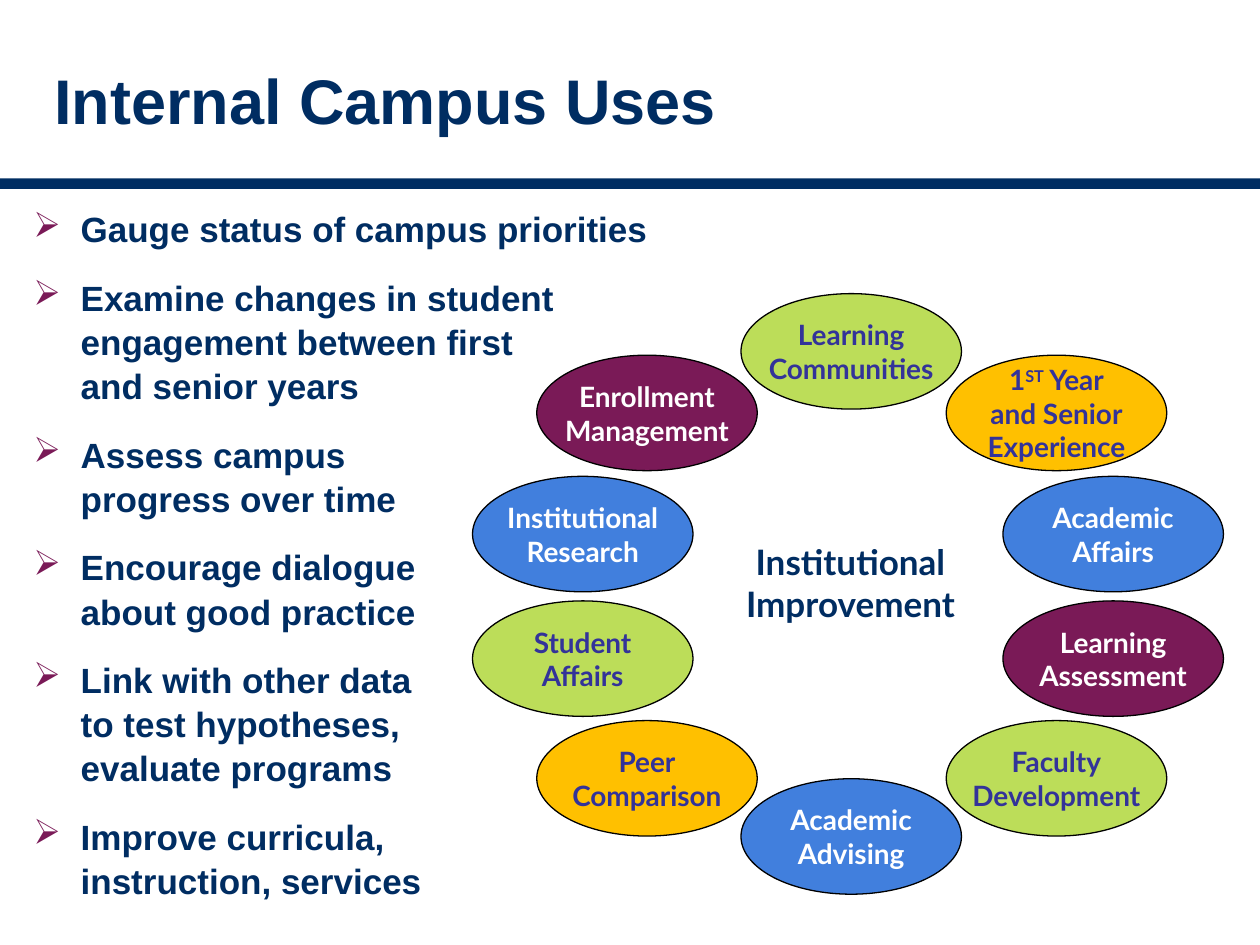
"""Build the slide on internal campus uses with its ring of improvement areas."""
import pptx
import pptx.dml.color
import pptx.enum.shapes
import pptx.enum.text
import pptx.oxml.ns
import pptx.util
from lxml import etree

Pt = pptx.util.Pt
RGBColor = pptx.dml.color.RGBColor
Shape = pptx.enum.shapes.MSO_SHAPE
Align = pptx.enum.text.PP_ALIGN
Anchor = pptx.enum.text.MSO_ANCHOR
qn = pptx.oxml.ns.qn

NAVY = RGBColor(0x00, 0x2D, 0x62)
PLUM = RGBColor(0x7A, 0x1A, 0x57)
GREEN = RGBColor(0x99, 0xCC, 0x00)
GOLD = RGBColor(0xFF, 0xC0, 0x00)
BLUE = RGBColor(0x41, 0x7F, 0xDD)
INDIGO = RGBColor(0x33, 0x33, 0x99)
WHITE = RGBColor(0xFF, 0xFF, 0xFF)
BLACK = RGBColor(0x00, 0x00, 0x00)

OVAL_WIDTH, OVAL_HEIGHT = 126, 66
COLUMNS = (270, 306.7, 423.4, 540.7, 573.1)
ROWS = (167.8, 203, 272.2, 343.4, 411.8, 445)

USES = (
    "Gauge status of campus priorities",
    "Examine changes in student\nengagement between first\nand senior years",
    "Assess campus\nprogress over time",
    "Encourage dialogue\nabout good practice",
    "Link with other data\nto test hypotheses,\nevaluate programs",
    "Improve curricula,\ninstruction, services",
)

AREAS = (
    (2, 0, GREEN, INDIGO, 126, "Learning\nCommunities"),
    (3, 1, GOLD, INDIGO, 110, "1^ST^ Year\nand Senior\nExperience"),
    (4, 2, BLUE, WHITE, 92, "Academic\nAffairs"),
    (4, 3, PLUM, WHITE, 110, "Learning\nAssessment"),
    (3, 4, GREEN, INDIGO, 122, "Faculty\nDevelopment"),
    (2, 5, BLUE, WHITE, 92, "Academic\nAdvising"),
    (1, 4, GOLD, INDIGO, 110, "Peer\nComparison"),
    (0, 3, GREEN, INDIGO, 78, "Student\nAffairs"),
    (0, 2, BLUE, WHITE, 115, "Institutional\nResearch"),
    (1, 1, PLUM, WHITE, 120, "Enrollment\nManagement"),
)


class SlideBuilder:
    """Hold the slide and its style, and draw each kind of element."""

    heading_font = "Arial"
    diagram_font = "Lato"

    def __init__(self, slide):
        self.slide = slide

    def shape(self, kind, left, top, width, height, fill=None, line=None):
        """Add a preset shape without shadow."""
        shape = self.slide.shapes.add_shape(
            kind, Pt(left), Pt(top), Pt(width), Pt(height))
        shape.shadow.inherit = False
        if fill is None:
            shape.fill.background()
        else:
            shape.fill.solid()
            shape.fill.fore_color.rgb = fill
        if line is None:
            shape.line.fill.background()
        else:
            shape.line.color.rgb = line
            shape.line.width = Pt(0.75)
        return shape

    def fill_text(self, paragraph, text, font, size, color):
        """Set lines of bold text, with superscripts between carets."""
        for number, line in enumerate(text.split("\n")):
            if number:
                paragraph.add_line_break()
            for index, part in enumerate(line.split("^")):
                run = paragraph.add_run()
                run.text = part
                if index % 2:
                    run.font._element.set("baseline", "30000")
        paragraph.font.name = font
        paragraph.font.size = Pt(size)
        paragraph.font.bold = True
        paragraph.font.color.rgb = color

    def text_box(self, left, top, width, height, anchor, wrap=True):
        """Add an empty text box and return its text frame."""
        box = self.slide.shapes.add_textbox(
            Pt(left), Pt(top), Pt(width), Pt(height))
        box.text_frame.word_wrap = wrap
        box.text_frame.vertical_anchor = anchor
        return box.text_frame

    def title(self, text):
        """Add the slide title and the bar below it."""
        self.shape(Shape.RECTANGLE, 0, 102, 720, 6, NAVY)
        frame = self.text_box(24, 18, 672, 78, Anchor.MIDDLE)
        self.fill_text(frame.paragraphs[0], text, self.heading_font, 36, NAVY)

    def bullets(self, items):
        """Add the list with arrow bullets."""
        frame = self.text_box(12, 114, 445, 408, Anchor.TOP)
        for number, item in enumerate(items):
            paragraph = frame.add_paragraph() if number else frame.paragraphs[0]
            properties = paragraph._p.get_or_add_pPr()
            properties.set("marL", str(Pt(27)))
            properties.set("indent", str(-Pt(27)))
            color = etree.SubElement(properties, qn("a:buClr"))
            etree.SubElement(color, qn("a:srgbClr"), val=str(PLUM))
            etree.SubElement(properties, qn("a:buChar"), char="➢")
            paragraph.line_spacing = 1.05
            paragraph.space_before = Pt(4)
            paragraph.space_after = Pt(10)
            self.fill_text(paragraph, item, self.heading_font, 20, NAVY)

    def center(self, lines):
        """Add the caption in the middle of the ring."""
        shape = self.shape(Shape.FLOWCHART_PROCESS, 408, 306, 156, 54)
        frame = shape.text_frame
        frame.word_wrap = False
        frame.vertical_anchor = Anchor.MIDDLE
        for number, line in enumerate(lines):
            paragraph = frame.add_paragraph() if number else frame.paragraphs[0]
            paragraph.alignment = Align.CENTER
            self.fill_text(paragraph, line, self.diagram_font, 20, NAVY)

    def oval(self, left, top, fill):
        """Add one oval of the ring, with green ones see-through."""
        shape = self.shape(
            Shape.OVAL, left, top, OVAL_WIDTH, OVAL_HEIGHT, fill, BLACK)
        if fill == GREEN:
            color = shape._element.spPr.find(qn("a:solidFill"))[0]
            etree.SubElement(color, qn("a:alpha"), val="65000")

    def label(self, left, top, width, text, color):
        """Add a label centred on the oval at the given position."""
        height = 7.2 + 19.4 * len(text.split("\n"))
        frame = self.text_box(
            left + (OVAL_WIDTH - width) / 2, top + (OVAL_HEIGHT - height) / 2,
            width, height, Anchor.MIDDLE, wrap=False)
        frame.paragraphs[0].alignment = Align.CENTER
        self.fill_text(frame.paragraphs[0], text, self.diagram_font, 16, color)


def main():
    presentation = pptx.Presentation()
    presentation.slide_width = Pt(720)
    presentation.slide_height = Pt(540)
    builder = SlideBuilder(
        presentation.slides.add_slide(presentation.slide_layouts[6]))
    builder.title("Internal Campus Uses")
    builder.bullets(USES)
    builder.center(("Institutional", "Improvement"))
    for column, row, fill, color, width, text in AREAS:
        builder.oval(COLUMNS[column], ROWS[row], fill)
    for column, row, fill, color, width, text in AREAS:
        builder.label(COLUMNS[column], ROWS[row], width, text, color)
    presentation.save("out.pptx")


if __name__ == "__main__":
    main()
